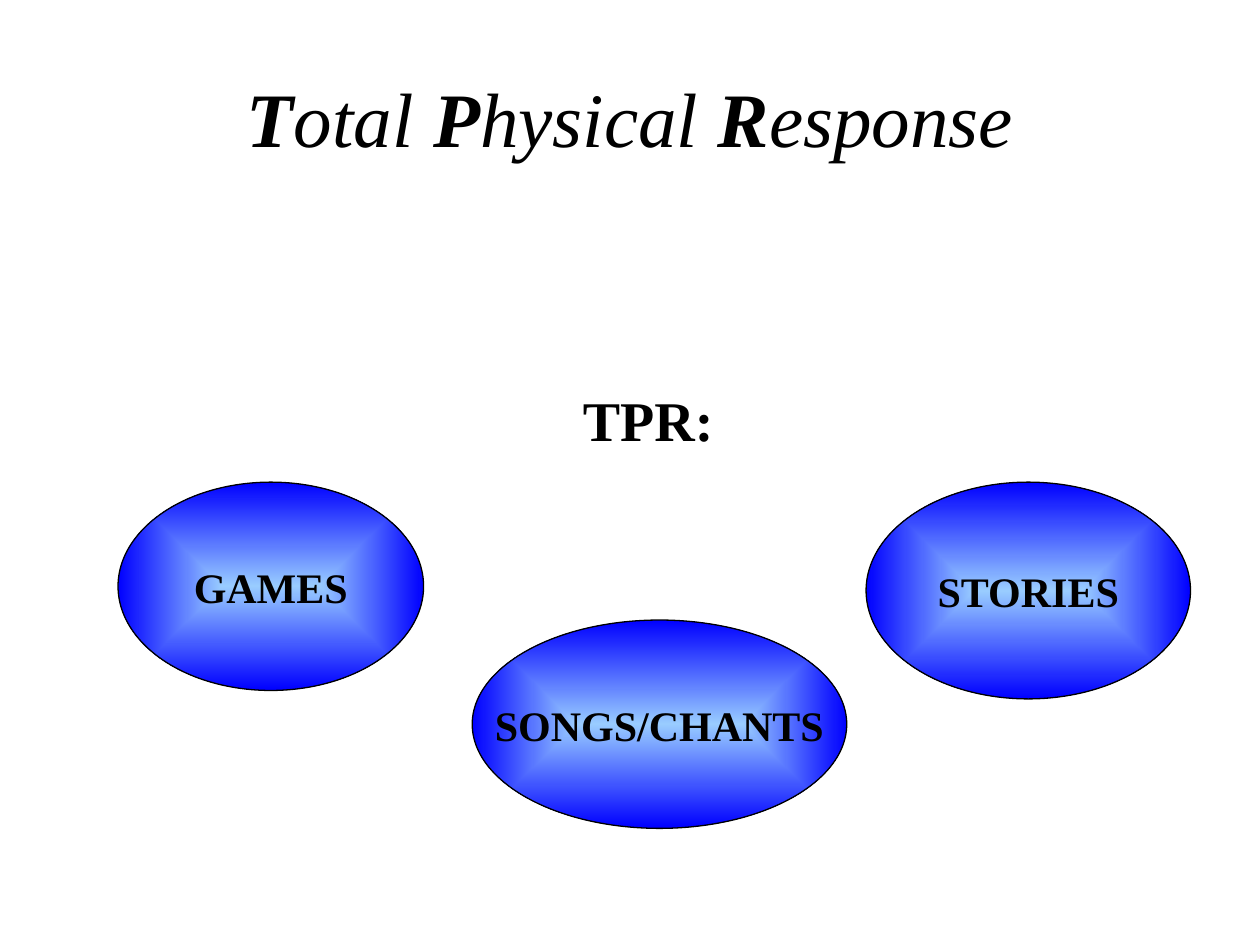
import pptx
import pptx.dml.color
import pptx.enum.shapes
import pptx.enum.text
import pptx.oxml
import pptx.oxml.ns
import pptx.util
from pptx.util import Cm

BLACK = pptx.dml.color.RGBColor(0x00, 0x00, 0x00)
SKY = pptx.dml.color.RGBColor(0x99, 0xCC, 0xFF)
BLUE = pptx.dml.color.RGBColor(0x00, 0x00, 0xFF)

CENTRE_PATH = (
    f'<a:path {pptx.oxml.ns.nsdecls("a")} path="rect">'
    '<a:fillToRect l="50000" t="50000" r="50000" b="50000"/></a:path>'
)


def add_span(para, text, *, font, size, bold=True, italic=False, color=BLACK):
    """Add text to a paragraph with its format."""
    span = para.add_run()
    span.text = text
    span.font.name = font
    span.font.size = pptx.util.Pt(size)
    span.font.bold = bold
    span.font.italic = italic
    span.font.color.rgb = color


class SlideBuilder:
    """Holds the style and the page being filled."""

    font = "Times New Roman"
    title_size, heading_size, label_size = 44, 32, 24

    def __init__(self, page):
        self.page = page

    def text(self, spans, left, top, width, height, *, size, italic=False,
             anchor=pptx.enum.text.MSO_ANCHOR.TOP, inset=0.13):
        box = self.page.shapes.add_textbox(Cm(left), Cm(top), Cm(width), Cm(height))
        frame = box.text_frame
        frame.word_wrap = True
        frame.vertical_anchor = anchor
        frame.margin_top = Cm(inset)
        para = frame.paragraphs[0]
        para.alignment = pptx.enum.text.PP_ALIGN.CENTER
        for words, bold in spans:
            add_span(para, words, font=self.font, size=size, bold=bold, italic=italic)

    def ellipse(self, label, left, top, width, height):
        shape = self.page.shapes.add_shape(
            pptx.enum.shapes.MSO_SHAPE.OVAL, Cm(left), Cm(top), Cm(width), Cm(height))
        shape.shadow.inherit = False
        shape.line.color.rgb = BLACK
        shape.line.width = pptx.util.Pt(0.75)

        # Gradient from a light centre to a dark edge
        fill = shape.fill
        fill.gradient()
        for stop, color in zip(fill.gradient_stops, (SKY, BLUE)):
            stop.color.rgb = color
        linear = shape.element.spPr.find(".//" + pptx.oxml.ns.qn("a:lin"))
        linear.getparent().replace(linear, pptx.oxml.parse_xml(CENTRE_PATH))

        frame = shape.text_frame
        frame.word_wrap = False
        frame.vertical_anchor = pptx.enum.text.MSO_ANCHOR.MIDDLE
        para = frame.paragraphs[0]
        para.alignment = pptx.enum.text.PP_ALIGN.CENTER
        add_span(para, label, font=self.font, size=self.label_size)


def main():
    deck = pptx.Presentation()
    deck.slide_width, deck.slide_height = Cm(25.4), Cm(19.05)
    builder = SlideBuilder(deck.slides.add_slide(deck.slide_layouts[6]))

    # Title with bold initials
    title = [("T", True), ("otal", False), (" P", True), ("hysical ", False),
             ("R", True), ("esponse", False)]
    builder.text(title, 1.27, 0.76, 22.86, 3.18, size=builder.title_size,
                 italic=True, anchor=pptx.enum.text.MSO_ANCHOR.MIDDLE)

    # Heading above the activities
    builder.text([("TPR: ", True)], 1.78, 4.37, 22.86, 12.57,
                 size=builder.heading_size, inset=3.41)

    # Activities
    for label, left, top, width, height in (
        ("GAMES", 2.38, 9.72, 6.16, 4.2),
        ("SONGS/CHANTS", 9.52, 12.5, 7.55, 4.2),
        ("STORIES", 17.46, 9.72, 6.54, 4.37),
    ):
        builder.ellipse(label, left, top, width, height)

    deck.save("out.pptx")


if __name__ == "__main__":
    main()
